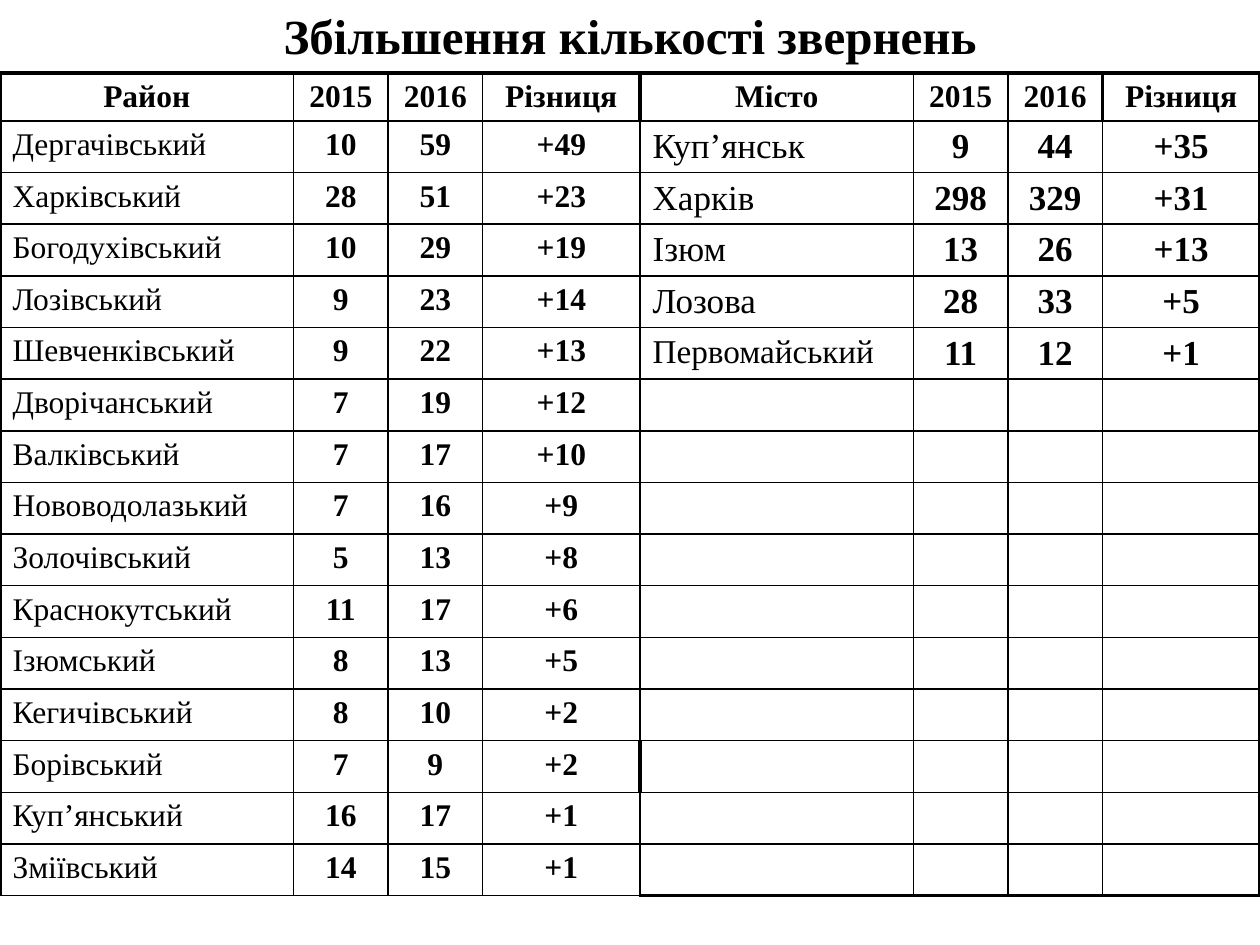
from pptx import Presentation
from pptx.dml.color import RGBColor
from pptx.enum.text import MSO_ANCHOR, PP_ALIGN
from pptx.oxml import parse_xml
from pptx.oxml.ns import nsdecls
from pptx.util import Inches, Pt

# Content
TITLE = "Збільшення кількості звернень"
HEADS = ["Район", "2015", "2016", "Різниця", "Місто", "2015", "2016", "Різниця"]
AREAS = [
    ("Дергачівський", 10, 59), ("Харківський", 28, 51),
    ("Богодухівський", 10, 29), ("Лозівський", 9, 23),
    ("Шевченківський", 9, 22), ("Дворічанський", 7, 19),
    ("Валківський", 7, 17), ("Нововодолазький", 7, 16),
    ("Золочівський", 5, 13), ("Краснокутський", 11, 17),
    ("Ізюмський", 8, 13), ("Кегичівський", 8, 10),
    ("Борівський", 7, 9), ("Куп’янський", 16, 17),
    ("Зміївський", 14, 15),
]
TOWNS = [
    ("Куп’янськ", 9, 44), ("Харків", 298, 329), ("Ізюм", 13, 26),
    ("Лозова", 28, 33), ("Первомайський", 11, 12),
]

# Format
BLACK = RGBColor(0, 0, 0)
FONT = "Times New Roman"
WIDTHS = [2.33, 0.75, 0.75, 1.25, 2.17, 0.75, 0.75, 1.25]
HEAD_H, ROW_H = 0.38, 0.41
THIN, THICK = 1, 2.25
HALF = 4  # first column of the town half
SIZES = {"Первомайський": 19}


def style(par, size, bold, align):
    par.alignment = align
    look = {"name": FONT, "size": Pt(size), "bold": bold}
    for run in par.runs:
        for key, val in look.items():
            setattr(run.font, key, val)
        run.font.color.rgb = BLACK


def edge(cell, widths):
    props = cell._tc.get_or_add_tcPr()
    for pos, (side, width) in enumerate(widths.items()):
        props.insert(pos, parse_xml(
            f'<a:ln{side} {nsdecls("a")} w="{Pt(width)}"><a:solidFill>'
            f'<a:srgbClr val="{BLACK}"/></a:solidFill></a:ln{side}>'))


def line(item):
    """Name, both years and the signed difference; blanks if no item."""
    if item is None:
        return [""] * HALF
    name, old, new = item
    return [name, str(old), str(new), f"+{new - old}"]


# Slide and title
deck = Presentation()
deck.slide_width, deck.slide_height = Inches(10), Inches(7.5)
slide = deck.slides.add_slide(deck.slide_layouts[5])
title = slide.shapes.title
box = {"left": 0, "top": 0, "width": 10, "height": 0.56}
for key, val in box.items():
    setattr(title, key, Inches(val))
title.text_frame.text = TITLE
title.text_frame.vertical_anchor = MSO_ANCHOR.MIDDLE
style(title.text_frame.paragraphs[0], 28, True, PP_ALIGN.CENTER)

# Table grid
pad = TOWNS + [None] * (len(AREAS) - len(TOWNS))
rows = [HEADS] + [line(area) + line(town) for area, town in zip(AREAS, pad)]
last = len(rows) - 1
end = len(HEADS) - 1
thick_mid = {0, 13}  # rows with a heavy line between the halves
frame = slide.shapes.add_table(
    len(rows), len(HEADS), 0, Inches(0.58), Inches(sum(WIDTHS)),
    Inches(HEAD_H + ROW_H * last))
table = frame.table
table.first_row = table.horz_banding = False
for col, width in zip(table.columns, WIDTHS):
    col.width = Inches(width)

# Cells
for r, texts in enumerate(rows):
    table.rows[r].height = Inches(ROW_H if r else HEAD_H)
    for c, text in enumerate(texts):
        cell = table.cell(r, c)
        cell.fill.background()
        mid = r in thick_mid
        heavy = {
            "L": c == 0 or (mid and c == HALF) or (r == 0 and c == end),
            "R": c == end or (mid and c == HALF - 1) or (r == 0 and c == end - 1),
            "T": r == 0,
            "B": r == last and c >= HALF,
        }
        edge(cell, {side: THICK if on else THIN for side, on in heavy.items()})
        if text:
            cell.text = text
            name = r > 0 and c % HALF == 0
            size = SIZES.get(text, 20 if r and c >= HALF else 18)
            style(cell.text_frame.paragraphs[0], size, not name,
                  PP_ALIGN.LEFT if name else PP_ALIGN.CENTER)

deck.save("out.pptx")
